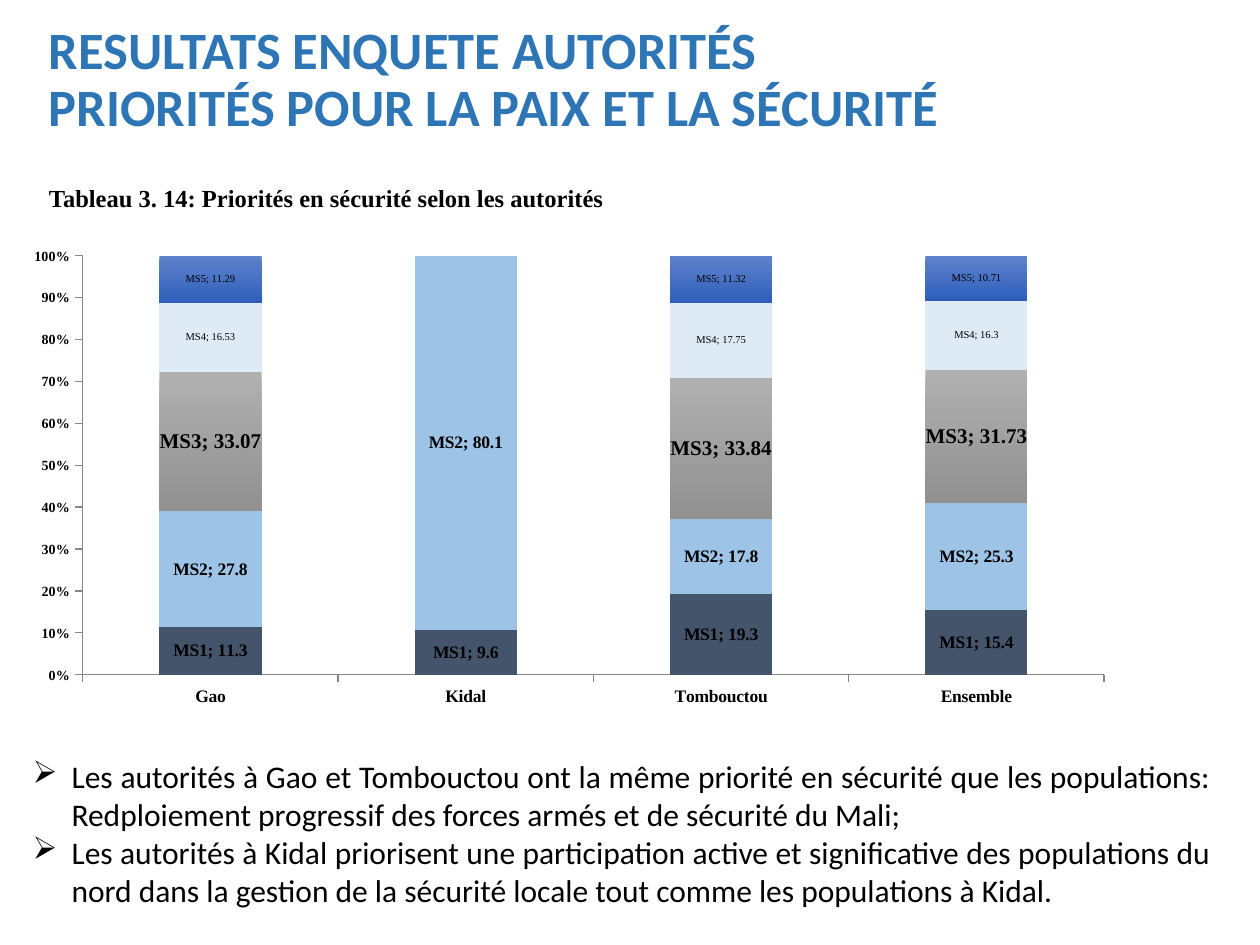
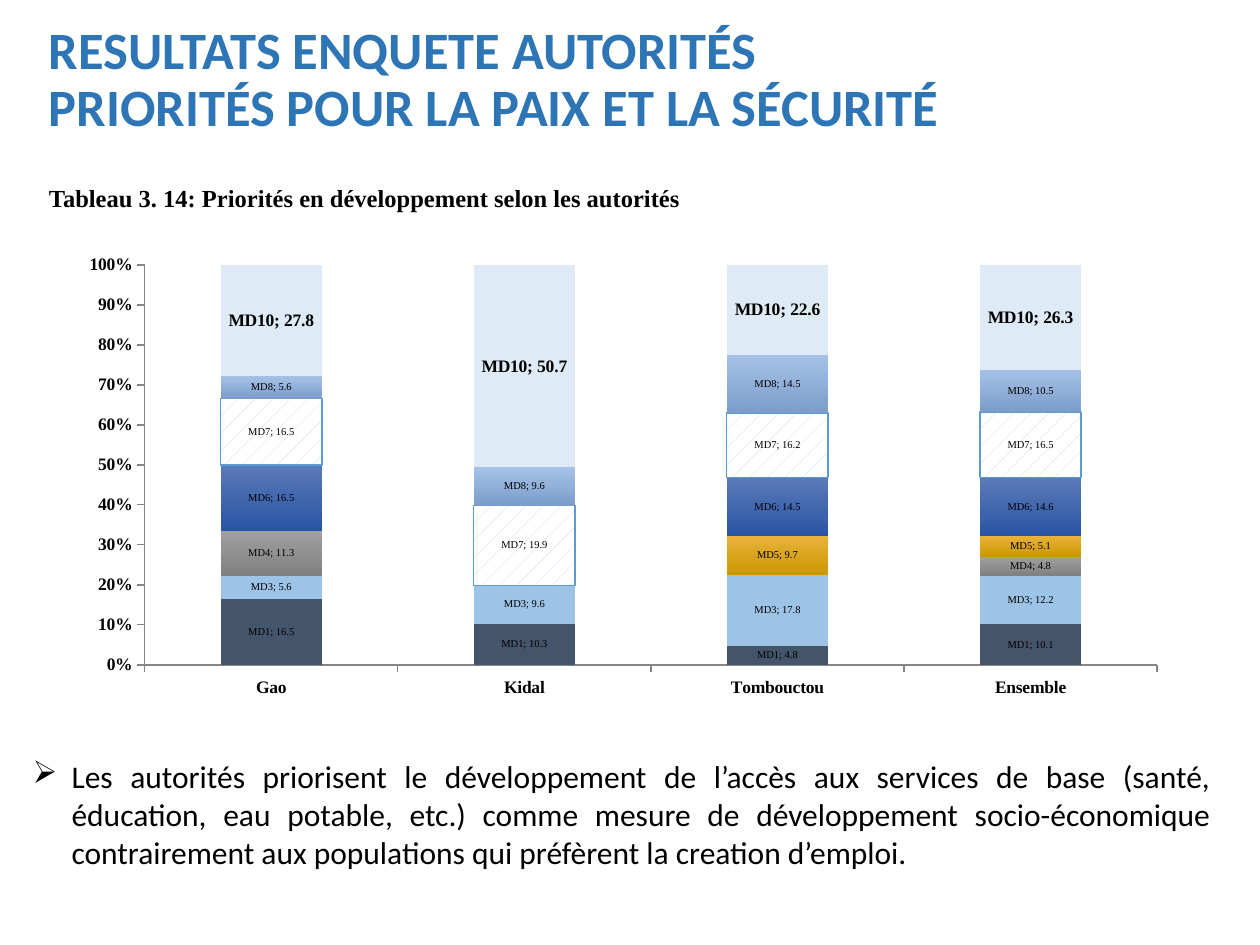
import dataclasses

import lxml.etree
import pptx
import pptx.chart.data
import pptx.dml.color
import pptx.enum.chart
import pptx.enum.dml
import pptx.enum.text
import pptx.oxml.ns
import pptx.util


@dataclasses.dataclass(frozen=True)
class Theme:
    title_color: str = "2E75B6"
    text_color: str = "000000"
    axis_color: str = "868686"
    hatch_line: str = "5B9BD5"
    hatch: tuple = ("BDD7EE", "FFFFFF")
    navy: tuple = ("44546A",)
    sky: tuple = ("9DC3E6",)
    pale: tuple = ("DEEBF7",)
    gray: tuple = ("B0B0B0", "919191")
    dark_gray: tuple = ("A0A0A0", "808080")
    gold: tuple = ("E9B23C", "CC9800")
    blue: tuple = ("5F83CB", "2E5EBB")
    dark_blue: tuple = ("5B79B7", "2955A6")
    soft_blue: tuple = ("A5C1E7", "7C9DCA")
    sans: str = "Calibri"
    serif: str = "Times New Roman"
    title_size: int = 30
    body_size: int = 18
    caption_size: int = 14
    strong_label: int = 12
    label: int = 10
    small_axis: int = 8
    small_label: int = 6


theme = Theme()
rgb = pptx.dml.color.RGBColor.from_string
qn = pptx.oxml.ns.qn
ALIGN = pptx.enum.text.PP_ALIGN
ANCHOR = pptx.enum.text.MSO_ANCHOR

presentation = pptx.Presentation()
presentation.slide_width = pptx.util.Inches(10)
presentation.slide_height = pptx.util.Inches(7.5)

# Grid of 100 columns and 75 rows
column = presentation.slide_width / 100
row = presentation.slide_height / 75


def place(left, top, width, height):
    return [int(length) for length in (left * column, top * row, width * column, height * row)]


def add_text(slide, paragraphs, area, *, font, size, color=theme.text_color, bold=False,
             anchor=ANCHOR.MIDDLE, align=ALIGN.LEFT, spacing=None, bullet=None):
    frame = slide.shapes.add_textbox(*place(*area)).text_frame
    frame.word_wrap = True
    frame.vertical_anchor = anchor
    for index, text in enumerate(paragraphs):
        paragraph = frame.paragraphs[0] if index == 0 else frame.add_paragraph()
        paragraph.text = text
        paragraph.alignment = align
        paragraph.line_spacing = spacing
        for run in paragraph.runs:
            run.font.name, run.font.size, run.font.bold = font, pptx.util.Pt(size), bold
            run.font.color.rgb = rgb(color)
        if bullet:
            properties = paragraph._p.get_or_add_pPr()
            indent = pptx.util.Inches(0.31)
            properties.set("marL", str(indent))
            properties.set("indent", str(-indent))
            lxml.etree.SubElement(properties, qn("a:buChar"), char=bullet)


# Content: each series has a name, values, fill, label size and number format
title = "RESULTATS ENQUETE AUTORITÉS\vPRIORITÉS POUR LA PAIX ET LA SÉCURITÉ"
regions = ["Gao", "Kidal", "Tombouctou", "Ensemble"]
pages = [
    dict(
        caption="Tableau 3. 14: Priorités en sécurité selon les autorités",
        area=(1, 18.9, 88.4, 38),
        plot=dict(x=0.063, y=0.037, w=0.917, h=0.875),
        axis_size=theme.small_axis,
        series=[
            ("MS1", (11.3, 9.6, 19.3, 15.4), theme.navy, theme.label, "0.0"),
            ("MS2", (27.8, 80.1, 17.8, 25.3), theme.sky, theme.label, "0.0"),
            ("MS3", (33.07, None, 33.84, 31.73), theme.gray, theme.strong_label, "General"),
            ("MS4", (16.53, None, 17.75, 16.3), theme.pale, theme.small_label, "General"),
            ("MS5", (11.29, None, 11.32, 10.71), theme.blue, theme.small_label, "General"),
        ],
        findings=[
            "Les autorités à Gao et Tombouctou ont la même priorité en sécurité que les "
            "populations: Redploiement progressif des forces armés et de sécurité du Mali;",
            "Les autorités à Kidal priorisent une participation active et significative des "
            "populations du nord dans la gestion de la sécurité locale tout comme les "
            "populations à Kidal.",
        ],
    ),
    dict(
        caption="Tableau 3. 14: Priorités en développement selon les autorités",
        area=(5.4, 19.5, 88.2, 36.5),
        plot=dict(x=0.069, y=0.042, w=0.911, h=0.87),
        axis_size=theme.label,
        series=[
            ("MD1", (16.5, 10.3, 4.8, 10.1), theme.navy, theme.small_label, "0.0"),
            ("MD3", (5.6, 9.6, 17.8, 12.2), theme.sky, theme.small_label, "0.0"),
            ("MD4", (11.3, 0, 0, 4.8), theme.dark_gray, theme.small_label, "0.0"),
            ("MD5", (0, 0, 9.7, 5.1), theme.gold, theme.small_label, "0.0"),
            ("MD6", (16.5, 0, 14.5, 14.6), theme.dark_blue, theme.small_label, "0.0"),
            ("MD7", (16.5, 19.9, 16.2, 16.5), theme.hatch, theme.small_label, "0.0"),
            ("MD8", (5.6, 9.6, 14.5, 10.5), theme.soft_blue, theme.small_label, "0.0"),
            ("MD10", (27.8, 50.7, 22.6, 26.3), theme.pale, theme.label, "0.0"),
        ],
        findings=[
            "Les autorités priorisent le développement de l’accès aux services de base (santé, "
            "éducation, eau potable, etc.) comme mesure de développement socio-économique "
            "contrairement aux populations qui préfèrent la creation d’emploi.",
        ],
    ),
]

for page in pages:
    slide = presentation.slides.add_slide(presentation.slide_layouts[6])

    # Title, findings and caption
    add_text(slide, [title], (2.9, 2.2, 94.2, 8.5), font=theme.sans, size=theme.title_size,
             color=theme.title_color, bold=True, spacing=0.9)
    add_text(slide, page["findings"], (1.6, 59.6, 95.5, 13.1), font=theme.sans,
             size=theme.body_size, anchor=ANCHOR.TOP, align=ALIGN.JUSTIFY, bullet="➢")
    add_text(slide, [page["caption"]], (2.9, 14, 69.3, 3.4), font=theme.serif,
             size=theme.caption_size, bold=True)

    # Stacked chart
    chart_data = pptx.chart.data.CategoryChartData()
    chart_data.categories = regions
    for name, values, *_ in page["series"]:
        chart_data.add_series(name, values)
    chart = slide.shapes.add_chart(pptx.enum.chart.XL_CHART_TYPE.COLUMN_STACKED_100,
                                   *place(*page["area"]), chart_data).chart
    chart.has_legend = chart.has_title = False
    chart.font.name, chart.font.size = theme.serif, pptx.util.Pt(theme.small_label)
    chart.font.color.rgb = rgb(theme.text_color)
    plot = chart.plots[0]
    plot.gap_width, plot.overlap, plot.vary_by_categories = 150, 100, False

    # Inner plot area, as shares of the chart
    plot_area = chart._chartSpace.chart.plotArea
    for old_layout in plot_area.findall(qn("c:layout")):
        plot_area.remove(old_layout)
    layout = lxml.etree.Element(qn("c:layout"))
    manual = lxml.etree.SubElement(layout, qn("c:manualLayout"))
    settings = dict(layoutTarget="inner", xMode="edge", yMode="edge", **page["plot"])
    for tag, value in settings.items():
        lxml.etree.SubElement(manual, qn(f"c:{tag}"), val=str(value))
    plot_area.insert(0, layout)

    # Axes
    for axis, size in ((chart.category_axis, theme.label), (chart.value_axis, page["axis_size"])):
        axis.has_major_gridlines = False
        axis.major_tick_mark = pptx.enum.chart.XL_TICK_MARK.OUTSIDE
        axis.minor_tick_mark = pptx.enum.chart.XL_TICK_MARK.NONE
        axis.format.line.color.rgb = rgb(theme.axis_color)
        axis.format.line.width = pptx.util.Pt(0.75)
        font = axis.tick_labels.font
        font.name, font.size, font.bold = theme.serif, pptx.util.Pt(size), True
        font.color.rgb = rgb(theme.text_color)
    chart.value_axis.major_unit = 0.1
    chart.value_axis.tick_labels.number_format = "0%"
    chart.value_axis.tick_labels.number_format_is_linked = False

    for series, (_, values, colors, size, number_format) in zip(plot.series, page["series"]):
        # Solid, hatched or graded fill
        fill = series.format.fill
        series.invert_if_negative = False
        if colors == theme.hatch:
            fill.patterned()
            fill.pattern = pptx.enum.dml.MSO_PATTERN.PERCENT_5
            fill.fore_color.rgb, fill.back_color.rgb = map(rgb, colors)
            series.format.line.color.rgb = rgb(theme.hatch_line)
            series.format.line.width = pptx.util.Pt(0.75)
        elif len(colors) == 2:
            fill.gradient()
            fill.gradient_angle = 270
            for stop, color in zip(fill.gradient_stops, colors):
                stop.color.rgb = rgb(color)
        else:
            fill.solid()
            fill.fore_color.rgb = rgb(colors[0])

        # Labels with series name and value, none on zero values
        labels = series.data_labels
        labels.show_value = labels.show_series_name = True
        labels.number_format, labels.number_format_is_linked = number_format, False
        labels.font.name, labels.font.size = theme.serif, pptx.util.Pt(size)
        labels.font.bold = size > theme.small_label
        labels.font.color.rgb = rgb(theme.text_color)
        element = labels._element
        separator = lxml.etree.Element(qn("c:separator"))
        separator.text = "; "
        element.find(qn("c:showBubbleSize")).addnext(separator)
        zeros = [index for index, value in enumerate(values) if value == 0]
        for position, index in enumerate(zeros):
            hidden = lxml.etree.Element(qn("c:dLbl"))
            lxml.etree.SubElement(hidden, qn("c:idx"), val=str(index))
            lxml.etree.SubElement(hidden, qn("c:delete"), val="1")
            element.insert(position, hidden)

presentation.save("out.pptx")
